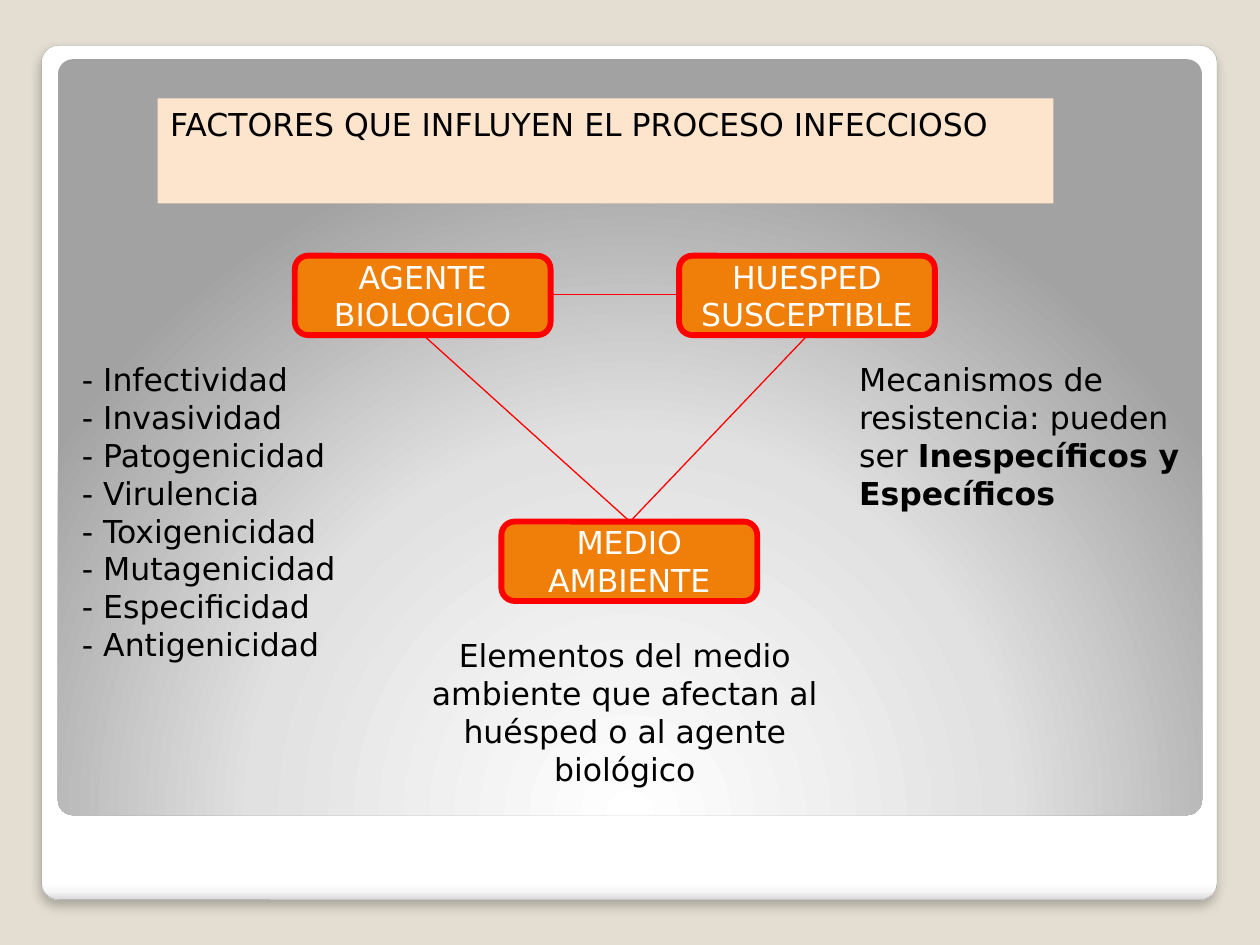
"""Builds the slide on the factors that influence the infectious process."""
from lxml import etree
from pptx import Presentation
from pptx import util as u
from pptx.dml.color import RGBColor
from pptx.enum import shapes, text
from pptx.oxml import parse_xml
from pptx.oxml.ns import nsdecls, qn

COLORS = {"backdrop": "E3DED1", "edge": "A4A4A4", "banner": "FDE5CD", "orange": "F07F09",
          "red": "FF0000", "white": "FFFFFF", "black": "000000"}
FONT = "DejaVu Sans"
LEFT, CENTER = text.PP_ALIGN.LEFT, text.PP_ALIGN.CENTER


def write(box, paragraphs, color="black", align=LEFT, anchor=text.MSO_ANCHOR.TOP):
    frame = box.text_frame
    frame.word_wrap = True
    frame.vertical_anchor = anchor
    for index, runs in enumerate(paragraphs):
        para = frame.add_paragraph() if index else frame.paragraphs[0]
        para.alignment = align
        para.space_before = u.Pt(0)
        for words, bold in runs:
            span = para.add_run()
            span.text = words
            span.font.name = FONT
            span.font.size = u.Pt(18)
            span.font.bold = bold
            span.font.color.rgb = RGBColor.from_string(COLORS[color])


def gradient(shape, stops, direction):
    marks = "".join(f'<a:gs pos="{place * 1000}"><a:srgbClr val="{color}"/></a:gs>'
                    for place, color in stops)
    shape.fill.background()
    properties = shape._element.spPr
    properties.replace(properties.find(qn("a:noFill")), parse_xml(
        f'<a:gradFill {nsdecls("a")} rotWithShape="1"><a:gsLst>{marks}</a:gsLst>{direction}</a:gradFill>'))


deck = Presentation()
deck.slide_width, deck.slide_height = u.Inches(10), u.Inches(7.5)
page = deck.slides.add_slide(deck.slide_layouts[1])
page.background.fill.solid()
page.background.fill.fore_color.rgb = RGBColor.from_string(COLORS["backdrop"])
title, traits = page.placeholders

panels = []
for area in [(0.33, 0.36, 9.33, 6.78), (0.46, 0.47, 9.08, 6)]:
    panel = page.shapes.add_shape(shapes.MSO_SHAPE.ROUNDED_RECTANGLE, *map(u.Inches, area))
    panel.adjustments[0] = 0.02
    panel.shadow.inherit = False
    panel.line.fill.background()
    title._element.addprevious(panel._element)
    panels.append(panel)
card, backing = panels

gradient(card, [(0, "FFFFFF"), (98, "FFFFFF"), (99, "F7F7F7"), (100, "DADADA")],
         '<a:lin ang="5400000" scaled="0"/>')
card.line.color.rgb = RGBColor.from_string(COLORS["edge"])
card.line.width = u.Pt(0.16)
card._element.spPr.find(qn("a:effectLst")).append(parse_xml(
    f'<a:outerShdw {nsdecls("a")} blurRad="{u.Pt(6)}" dist="{u.Pt(4)}" dir="5400000" algn="tl" '
    'rotWithShape="0"><a:srgbClr val="000000"><a:alpha val="25000"/></a:srgbClr></a:outerShdw>'))
gradient(backing, [(0, "FFFFFF"), (55, "E1E1E1"), (100, "A2A2A2")],
         '<a:path path="circle"><a:fillToRect l="50000" t="175000" r="50000" b="-75000"/></a:path>')

title.left, title.top, title.width, title.height = map(u.Inches, (1.25, 0.78, 7.11, 0.4))
title.fill.solid()
title.fill.fore_color.rgb = RGBColor.from_string(COLORS["banner"])
title.text_frame.auto_size = text.MSO_AUTO_SIZE.SHAPE_TO_FIT_TEXT
write(title, [[("FACTORES QUE INFLUYEN EL PROCESO INFECCIOSO", False)]])

WIDTH, HEIGHT = 2.03, 0.63
for label, left, top in [("AGENTE BIOLOGICO", 2.34, 2.03), ("HUESPED SUSCEPTIBLE", 5.39, 2.03),
                         ("MEDIO AMBIENTE", 3.98, 4.14)]:
    factor = page.shapes.add_shape(shapes.MSO_SHAPE.ROUNDED_RECTANGLE,
                                   *map(u.Inches, (left, top, WIDTH, HEIGHT)))
    factor.shadow.inherit = False
    factor.fill.solid()
    factor.fill.fore_color.rgb = RGBColor.from_string(COLORS["orange"])
    factor.line.color.rgb = RGBColor.from_string(COLORS["red"])
    factor.line.width = u.Pt(3.35)
    write(factor, [[(label, False)]], "white", CENTER, text.MSO_ANCHOR.MIDDLE)

for ends in [(4.37, 2.34, 5.39, 2.34), (3.36, 2.66, 5, 4.14), (5, 4.14, 6.41, 2.66)]:
    link = page.shapes.add_connector(shapes.MSO_CONNECTOR.STRAIGHT, *map(u.Inches, ends))
    link.line.color.rgb = RGBColor.from_string(COLORS["red"])
    link.line.width = u.Pt(0.75)
    etree.SubElement(link._element.spPr, qn("a:effectLst"))

traits.left, traits.top, traits.width, traits.height = map(u.Inches, (0.55, 2.81, 2.27, 2.52))
traits.text_frame.auto_size = text.MSO_AUTO_SIZE.SHAPE_TO_FIT_TEXT
names = ["Infectividad", "Invasividad", "Patogenicidad", "Virulencia",
         "Toxigenicidad", "Mutagenicidad", "Especificidad", "Antigenicidad"]
write(traits, [[(f"- {name}", False)] for name in names])
for para in traits.text_frame.paragraphs:
    settings = para._p.get_or_add_pPr()
    settings.set("marL", "0")
    settings.set("indent", "0")
    etree.SubElement(settings, qn("a:buNone"))

for area, align, runs in [
        ((6.72, 2.81, 2.81, 1.31), LEFT, [("Mecanismos de resistencia: pueden ser ", False),
                                          ("Inespecíficos y Específicos", True)]),
        ((3.28, 5, 3.36, 1.31), CENTER, [("Elementos del medio ambiente que afectan al "
                                          "huésped o al agente biológico", False)])]:
    note = page.shapes.add_textbox(*map(u.Inches, area))
    note.text_frame.auto_size = text.MSO_AUTO_SIZE.SHAPE_TO_FIT_TEXT
    write(note, [runs], align=align)

deck.save("out.pptx")
